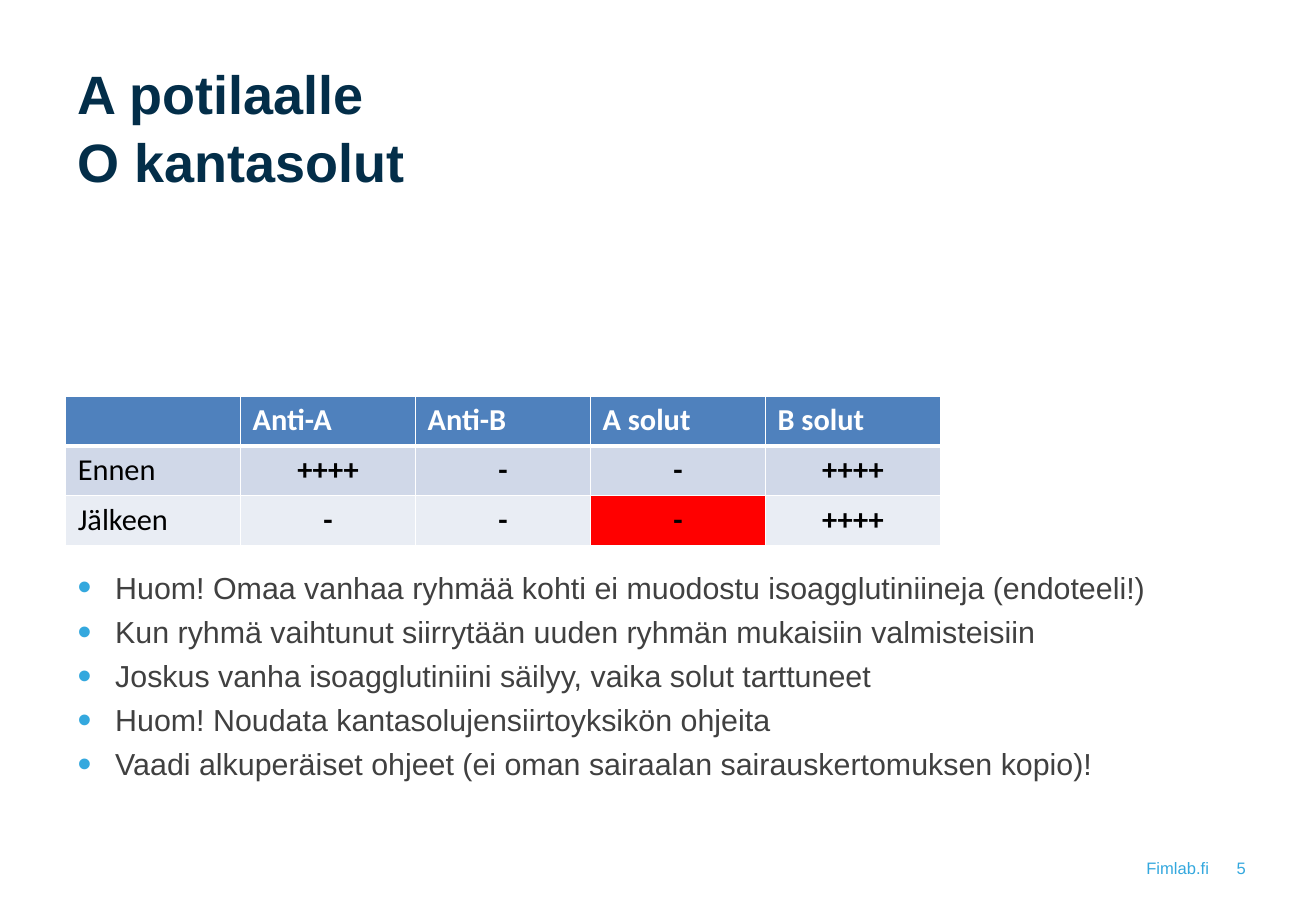
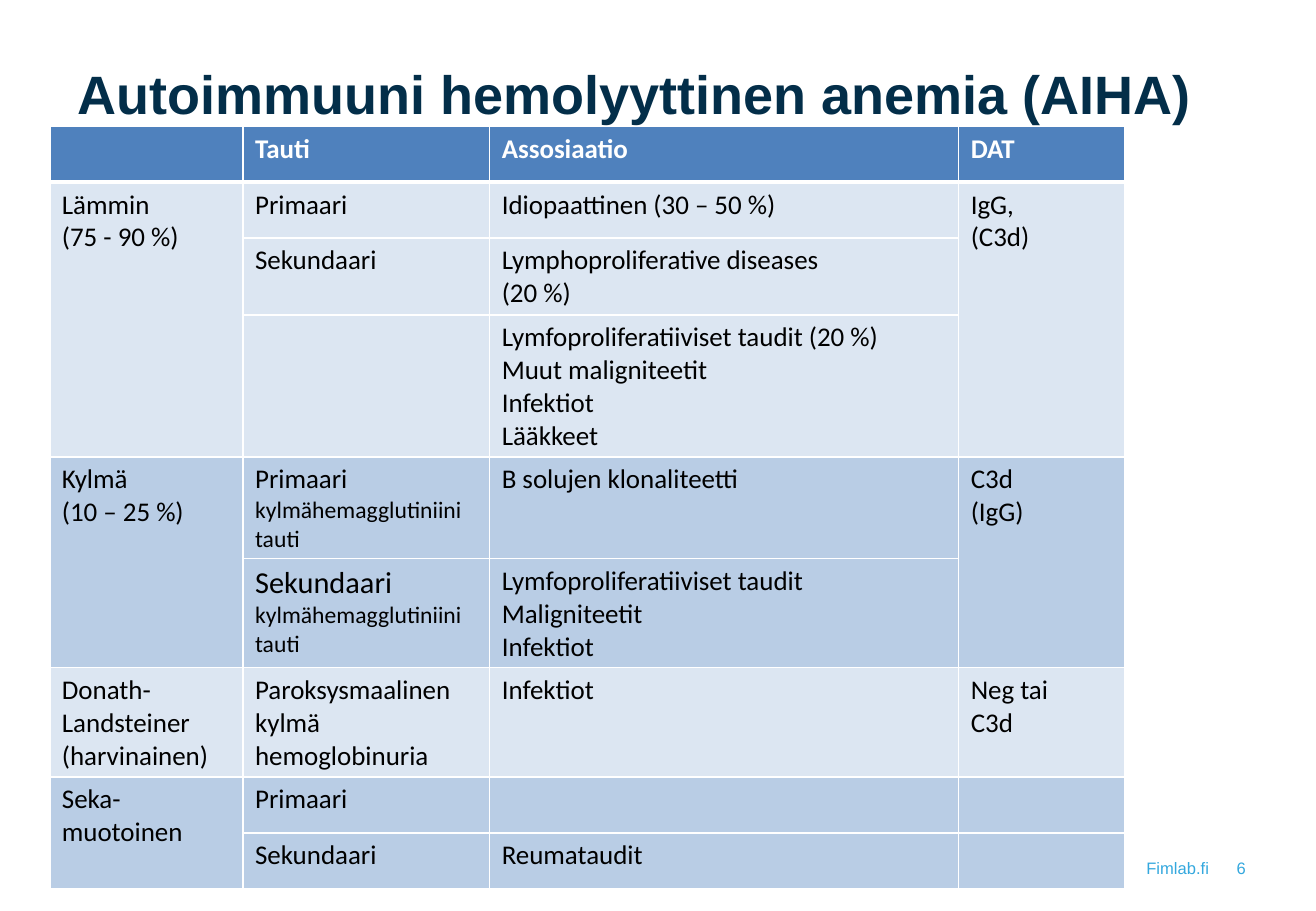
from dataclasses import dataclass
from lxml.etree import SubElement
from pptx import Presentation
from pptx.dml.color import RGBColor
from pptx.enum.text import MSO_ANCHOR, PP_ALIGN
from pptx.oxml import parse_xml
from pptx.oxml.ns import nsdecls, qn
from pptx.util import Emu, Inches, Pt


@dataclass(frozen=True)
class Theme:
    heading_font: str = "Arial"
    table_font: str = "Calibri"
    navy: str = "032E49"
    sky: str = "34A8DE"
    grey: str = "404040"
    black: str = "000000"
    white: str = "FFFFFF"
    header: str = "4F81BD"
    alert: str = "FF0000"
    light_band: str = "DCE6F2"
    dark_band: str = "B9CDE5"
    first_band: str = "D0D8E8"
    second_band: str = "E9EDF4"
    title_size: float = 32
    body_size: float = 18
    table_size: float = 16
    note_size: float = 14
    footer_size: float = 9.8
    line_spacing: float = 1.05


THEME = Theme()
FIRST_NUMBER = 5
FOOTER = "Fimlab.fi"

TITLE_PLACE = (0.54, 0.42, 9.75, 0.79)
BULLETS_PLACE = (0.54, 4.62, 9.75, 2.15)
FOOTER_PLACE = (8.18, 7.06, 1.77, 0.16)
NUMBER_PLACE = (10.02, 7.06, 0.39, 0.16)

BULLETS = [
    "Huom! Omaa vanhaa ryhmää kohti ei muodostu isoagglutiniineja (endoteeli!)",
    "Kun ryhmä vaihtunut siirrytään uuden ryhmän mukaisiin valmisteisiin",
    "Joskus vanha isoagglutiniini säilyy, vaika solut tarttuneet",
    "Huom! Noudata kantasolujensiirtoyksikön ohjeita",
    "Vaadi alkuperäiset ohjeet (ei oman sairaalan sairauskertomuksen kopio)!",
]

REACTIONS = [
    ["", "Anti-A", "Anti-B", "A solut", "B solut"],
    ["Ennen", "++++", "-", "-", "++++"],
    ["Jälkeen", "-", "-", "-", "++++"],
]
ALERT_CELL = (2, 3)

NOTE = ("kylmähemagglutiniini tauti", THEME.note_size)
ANEMIAS = [
    ["", "Tauti", "Assosiaatio", "DAT"],
    ["Lämmin\n(75 - 90 %)", "Primaari", "Idiopaattinen (30 – 50 %)", "IgG,\n(C3d)"],
    ["", "Sekundaari", "Lymphoproliferative diseases\n(20 %)", ""],
    ["", "", "Lymfoproliferatiiviset taudit (20 %)\nMuut maligniteetit\nInfektiot\nLääkkeet", ""],
    ["Kylmä\n(10 – 25 %)", [[("Primaari ", THEME.table_size), NOTE]],
     "B solujen klonaliteetti", "C3d\n(IgG)"],
    ["", [[("Sekundaari", THEME.body_size)], [NOTE]],
     "Lymfoproliferatiiviset taudit\nMaligniteetit\nInfektiot", ""],
    ["Donath-\nLandsteiner (harvinainen)", "Paroksysmaalinen kylmä hemoglobinuria",
     "Infektiot", "Neg tai\nC3d"],
    ["Seka-muotoinen", "Primaari", "", ""],
    ["", "Sekundaari", "Reumataudit", ""],
]
ANEMIA_COLUMNS = [1.59, 2.03, 3.86, 1.37]
ANEMIA_ROWS = [0.46, 0.46, 0.63, 1.17, 0.83, 0.9, 0.9, 0.46, 0.46]
ANEMIA_GROUPS = [3, 2, 1, 2]
ANEMIA_MERGES = [((1, 0), (3, 0)), ((1, 3), (3, 3)), ((4, 0), (5, 0)),
                 ((4, 3), (5, 3)), ((7, 0), (8, 0))]


def inches(place):
    return [Inches(value) for value in place]


def style_font(font, name, size, color, bold=False):
    font.name = name
    font.size = Pt(size)
    font.bold = bold
    font.color.rgb = RGBColor.from_string(color)


def add_text(page, place, lines, inset=None):
    box = page.shapes.add_textbox(*inches(place))
    frame = box.text_frame
    frame.word_wrap = True
    if inset is not None:
        frame.margin_left = frame.margin_right = Inches(inset)
        frame.margin_top = frame.margin_bottom = Inches(inset)
    frame.text = "\n".join(lines)
    return frame.paragraphs


def add_footer(page, number):
    for text, place, align in ((FOOTER, FOOTER_PLACE, PP_ALIGN.RIGHT),
                               (str(number), NUMBER_PLACE, PP_ALIGN.CENTER)):
        para = add_text(page, place, [text], inset=0)[0]
        para.alignment = align
        style_font(para.runs[0].font, THEME.heading_font, THEME.footer_size, THEME.sky)


def add_page(deck, title, number):
    page = deck.slides.add_slide(deck.slide_layouts[5])
    holder = page.shapes.title
    holder.left, holder.top, holder.width, holder.height = inches(TITLE_PLACE)
    frame = holder.text_frame
    frame.word_wrap = True
    frame.vertical_anchor = MSO_ANCHOR.TOP
    frame.text = title
    para = frame.paragraphs[0]
    para.alignment = PP_ALIGN.LEFT
    para.line_spacing = THEME.line_spacing
    for span in para.runs:
        style_font(span.font, THEME.heading_font, THEME.title_size, THEME.navy, True)
    add_footer(page, number)
    return page


def add_bullets(page):
    for index, para in enumerate(add_text(page, BULLETS_PLACE, BULLETS)):
        properties = para._p.get_or_add_pPr()
        properties.set("marL", str(Inches(0.31)))
        properties.set("indent", str(-Inches(0.31)))
        color = SubElement(properties, qn("a:buClr"))
        SubElement(color, qn("a:srgbClr"), val=THEME.sky)
        SubElement(properties, qn("a:buSzPct"), val="130000")
        SubElement(properties, qn("a:buFont"), typeface=THEME.heading_font)
        SubElement(properties, qn("a:buChar"), char="•")
        para.line_spacing = THEME.line_spacing
        if index:
            para.space_before = Pt(3.5)
        style_font(para.runs[0].font, THEME.heading_font, THEME.body_size, THEME.grey)


def set_borders(cell, row):
    widths = {"L": 1, "R": 1, "T": 3 if row == 1 else 1, "B": 3 if row == 0 else 1}
    properties = cell._tc.get_or_add_tcPr()
    for index, (side, width) in enumerate(widths.items()):
        properties.insert(index, parse_xml(
            f'<a:ln{side} {nsdecls("a")} w="{Pt(width)}"><a:solidFill>'
            f'<a:srgbClr val="{THEME.white}"/></a:solidFill></a:ln{side}>'))


def fill_cell(cell, content, size, color, bold, align):
    if isinstance(content, str):
        content = [[(line, size)] for line in content.split("\n")]
    frame = cell.text_frame
    for index, pieces in enumerate(content):
        para = frame.add_paragraph() if index else frame.paragraphs[0]
        para.alignment = align
        for text, points in pieces:
            if text:
                span = para.add_run()
                span.text = text
                style_font(span.font, THEME.table_font, points, color, bold)


def add_grid(page, corner, columns, rows, contents, bands, size, centred=False):
    place = (*corner, sum(columns), sum(rows))
    table = page.shapes.add_table(len(rows), len(columns), *inches(place)).table
    table.horz_banding = False
    for column, width in zip(table.columns, columns):
        column.width = Inches(width)
    for row, height in zip(table.rows, rows):
        row.height = Inches(height)
    for r, line in enumerate(contents):
        for c, content in enumerate(line):
            cell = table.cell(r, c)
            cell.fill.solid()
            cell.fill.fore_color.rgb = RGBColor.from_string(bands[r])
            set_borders(cell, r)
            middle = centred and r > 0 and c > 0
            fill_cell(cell, content, size, THEME.black if r else THEME.white,
                      r == 0 or middle, PP_ALIGN.CENTER if middle else PP_ALIGN.LEFT)
    return table


def build_reactions(page):
    bands = [THEME.header, THEME.first_band, THEME.second_band]
    table = add_grid(page, (0.54, 3.26), [1.44] * 5, [0.41] * 3, REACTIONS,
                     bands, THEME.body_size, centred=True)
    table.cell(*ALERT_CELL).fill.fore_color.rgb = RGBColor.from_string(THEME.alert)
    add_bullets(page)


def build_anemias(page):
    bands = [THEME.header]
    for index, count in enumerate(ANEMIA_GROUPS):
        bands += [THEME.dark_band if index % 2 else THEME.light_band] * count
    table = add_grid(page, (0.41, 1.04), ANEMIA_COLUMNS, ANEMIA_ROWS, ANEMIAS,
                     bands, THEME.table_size)
    for first, last in ANEMIA_MERGES:
        table.cell(*first).merge(table.cell(*last))


PAGES = [
    ("A potilaalle\vO kantasolut", build_reactions),
    ("Autoimmuuni hemolyyttinen anemia (AIHA)", build_anemias),
]


def main():
    deck = Presentation()
    deck.slide_width, deck.slide_height = Emu(Inches(10.83)), Emu(Inches(7.5))
    for number, (title, build) in enumerate(PAGES, FIRST_NUMBER):
        build(add_page(deck, title, number))
    deck.save("out.pptx")


if __name__ == "__main__":
    main()
